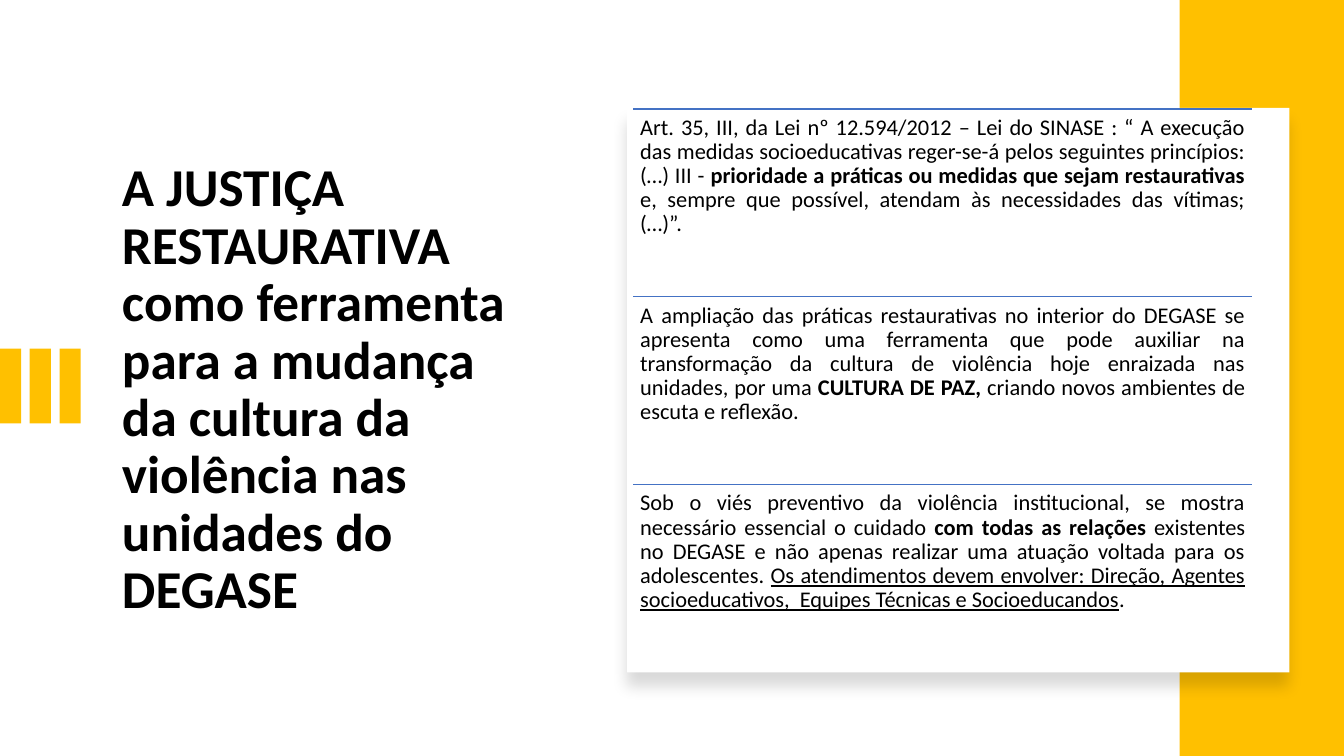
from lxml.etree import SubElement as Sub
from pptx import Presentation
from pptx.dml.color import RGBColor as Rgb
from pptx.enum.shapes import MSO_CONNECTOR as Conn, MSO_SHAPE as Kind
from pptx.enum.text import MSO_ANCHOR as Anchor, MSO_AUTO_SIZE as Fit, PP_ALIGN as Align
from pptx.oxml.ns import qn
from pptx.util import Inches, Pt

HUES = {"gold": "FFC000", "white": "FFFFFF", "black": "000000", "rule": "4472C4"}
FONT = "Calibri"
TITLE = ("A JUSTIÇA RESTAURATIVA como ferramenta para a mudança "
         "da cultura da violência nas unidades do DEGASE")
BOLD = {"bold": True}
UNDER = {"underline": True}
ITEMS = [
    [("Art. 35, III, da Lei nº 12.594/2012 – Lei do SINASE : “ A execução das medidas "
      "socioeducativas reger-se-á pelos seguintes princípios: (…) III - ", {}),
     ("prioridade a práticas ou medidas que sejam restaurativas ", BOLD),
     ("e, sempre que possível, atendam às necessidades das vítimas; (…)”.", {})],
    [("A ampliação das práticas restaurativas no interior do DEGASE se apresenta como uma "
      "ferramenta que pode auxiliar na transformação da cultura de violência hoje enraizada "
      "nas unidades, por uma ", {}),
     ("CULTURA DE PAZ, ", BOLD),
     ("criando novos ambientes de escuta e reflexão.", {})],
    [("Sob o viés preventivo da violência institucional, se mostra necessário essencial "
      "o cuidado ", {}),
     ("com todas as relações ", BOLD),
     ("existentes no DEGASE e não apenas realizar uma atuação voltada para os "
      "adolescentes. ", {}),
     ("Os atendimentos devem envolver: Direção, Agentes socioeducativos,  Equipes Técnicas "
      "e Socioeducandos", UNDER),
     (".", {})],
]


def tint(hue):
    return Rgb.from_string(HUES[hue])


def apply(obj, vals):
    for name, val in vals.items():
        setattr(obj, name, val)


def write(para, text, size, look):
    run = para.add_run()
    run.text = text
    apply(run.font, {"name": FONT, "size": Pt(size), **look})
    run.font.color.rgb = tint("black")


def block(slide, box, hue):
    rect = slide.shapes.add_shape(Kind.RECTANGLE, *map(Inches, box))
    rect.shadow.inherit = False
    rect.fill.solid()
    rect.fill.fore_color.rgb = tint(hue)
    rect.line.fill.background()
    return rect


def title(slide, box):
    head = slide.shapes.title
    left, top, width, height = map(Inches, box)
    apply(head, {"left": left, "top": top, "width": width, "height": height})
    frame = head.text_frame
    apply(frame, {"word_wrap": True, "auto_size": Fit.NONE,
                  "vertical_anchor": Anchor.MIDDLE})
    para = frame.paragraphs[0]
    apply(para, {"alignment": Align.LEFT, "line_spacing": 0.9})
    write(para, TITLE, 38, BOLD)


def bars(slide, box, count=3, wide=0.21):
    left, top, width, height = box
    step = (width - wide) / (count - 1)
    for i in range(count):
        block(slide, (left + i * step, top, wide, height), "gold")


def panel(slide, box):
    card = block(slide, box, "white")
    glow = card._element.spPr.find(qn("a:effectLst"))
    shade = Sub(glow, qn("a:outerShdw"), blurRad=str(Pt(11)), dist=str(Pt(10)),
                dir="5400000", algn="t", rotWithShape="0")
    hue = Sub(shade, qn("a:srgbClr"), val=HUES["black"])
    Sub(hue, qn("a:alpha"), val="15000")


def rule(slide, left, top, width):
    line = slide.shapes.add_connector(
        Conn.STRAIGHT, *map(Inches, (left, top, left + width, top)))
    line.line.color.rgb = tint("rule")
    line.line.width = Pt(1)
    Sub(line._element.spPr, qn("a:effectLst"))


def entry(slide, box, runs):
    frame = slide.shapes.add_textbox(*map(Inches, box)).text_frame
    pad = Inches(0.07)
    apply(frame, {"word_wrap": True, "margin_left": pad, "margin_right": pad,
                  "margin_top": pad, "margin_bottom": pad})
    para = frame.paragraphs[0]
    apply(para, {"alignment": Align.JUSTIFY, "line_spacing": 0.9})
    for text, look in runs:
        write(para, text, 16, look)


def listing(slide, box):
    left, top, width, height = box
    step = height / len(ITEMS)
    for i, runs in enumerate(ITEMS):
        y = top + i * step
        rule(slide, left, y, width)
        entry(slide, (left, y, width, step), runs)


def main():
    deck = Presentation()
    apply(deck, {"slide_width": Inches(13.33), "slide_height": Inches(7.5)})
    slide = deck.slides.add_slide(deck.slide_layouts[5])
    title(slide, (1.11, 1.48, 4.26, 4.79))
    bars(slide, (0, 3.46, 0.8, 0.74))
    block(slide, (11.7, 0, 1.63, 7.5), "gold")
    panel(slide, (6.22, 1.07, 6.57, 5.6))
    listing(slide, (6.28, 1.08, 6.14, 5.59))
    deck.save("out.pptx")


if __name__ == "__main__":
    main()
